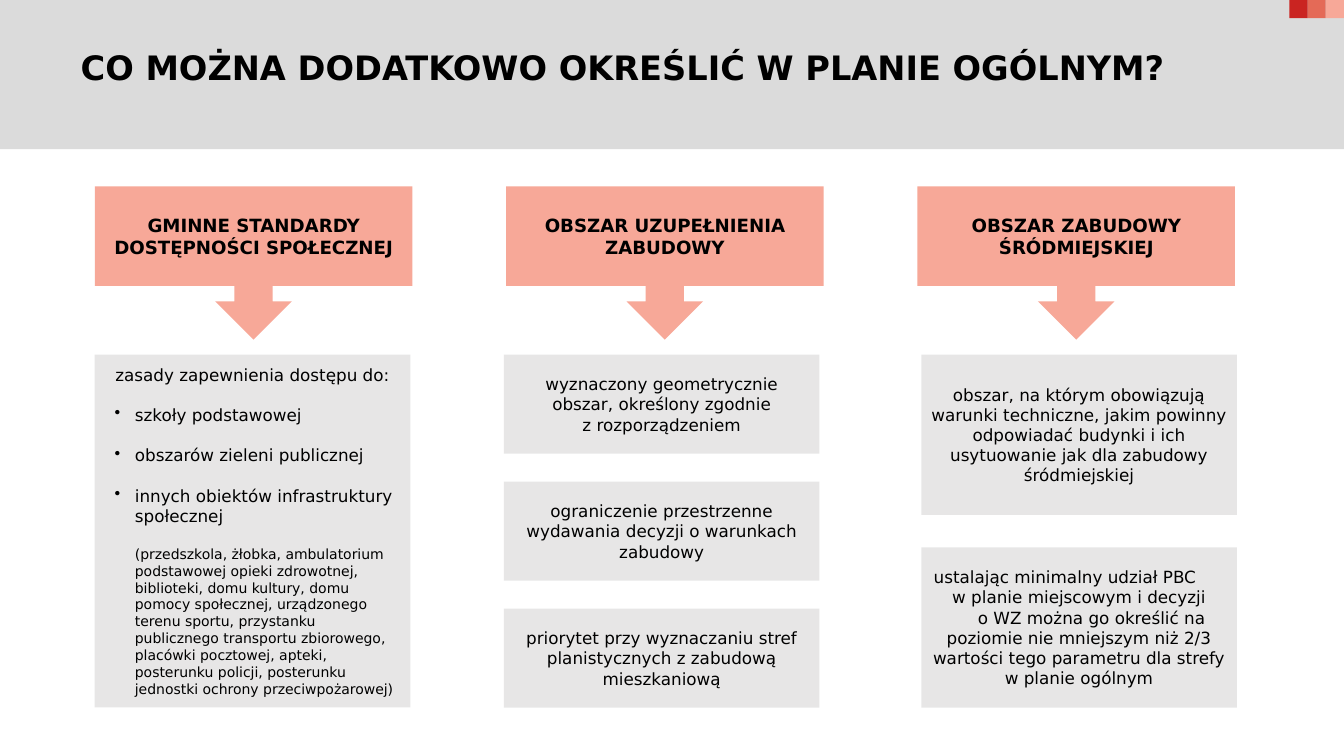
from dataclasses import dataclass

from lxml import etree
from pptx import Presentation
from pptx.dml.color import RGBColor
from pptx.enum.shapes import MSO_SHAPE as Kind
from pptx.enum.text import MSO_ANCHOR as Anchor, MSO_AUTO_SIZE as Fit, PP_ALIGN as Align
from pptx.oxml.ns import qn
from pptx.util import Pt

BLACK = RGBColor(0x00, 0x00, 0x00)
BAND = RGBColor(0xDB, 0xDB, 0xDB)
GREY = RGBColor(0xD0, 0xCE, 0xCE)
RED = RGBColor(0xCA, 0x24, 0x21)
CORAL = RGBColor(0xE4, 0x6A, 0x57)
PINK = RGBColor(0xF7, 0xA8, 0x98)
FONT = "DejaVu Sans"


@dataclass
class Par:
    text: str
    size: float = 12
    align: Align = Align.CENTER
    left: float = 0
    right: float = 0
    hang: float = 0
    gap: float = 0
    bold: bool = False


def item(text):
    return Par(text, align=Align.LEFT, left=21.6, hang=14.4, gap=14.4)


ACCESS = [
    Par("zasady zapewnienia dostępu do:"),
    item("szkoły podstawowej"),
    item("obszarów zieleni publicznej"),
    item("innych obiektów infrastruktury społecznej"),
    Par("(przedszkola, żłobka, ambulatorium podstawowej opieki zdrowotnej, "
        "biblioteki, domu kultury, domu pomocy społecznej, urządzonego terenu "
        "sportu, przystanku publicznego transportu zbiorowego, placówki "
        "pocztowej, apteki, posterunku policji, posterunku jednostki ochrony "
        "przeciwpożarowej)", size=10, align=Align.LEFT, left=21.6, gap=14),
]
INFILL = [
    [Par("wyznaczony geometrycznie obszar, określony zgodnie\nz rozporządzeniem")],
    [Par("ograniczenie przestrzenne"), Par("wydawania decyzji o warunkach"),
     Par("zabudowy")],
    [Par("priorytet przy wyznaczaniu stref"), Par("planistycznych z zabudową"),
     Par("mieszkaniową")],
]
CENTRE = [
    [Par("obszar, na którym obowiązują"),
     Par("warunki techniczne, jakim powinny odpowiadać budynki i ich "
         "usytuowanie jak dla zabudowy śródmiejskiej")],
    [Par("ustalając minimalny udział PBC", right=20),
     Par("w planie miejscowym i decyzji"),
     Par("o WZ można go określić na", left=18),
     Par("poziomie nie mniejszym niż 2/3 wartości tego parametru dla strefy "
         "w planie ogólnym")],
]

# Heading, left of the grey boxes, box height, box texts
COLS = [
    ("GMINNE STANDARDY DOSTĘPNOŚCI SPOŁECZNEJ", 67.7, 252, [ACCESS]),
    ("OBSZAR UZUPEŁNIENIA ZABUDOWY", 360, 70.6, INFILL),
    ("OBSZAR ZABUDOWY ŚRÓDMIEJSKIEJ", 658.1, 114.5, CENTRE),
]


def write(frame, pars, anchor=Anchor.MIDDLE):
    frame.word_wrap = True
    frame.auto_size = Fit.NONE
    frame.vertical_anchor = anchor
    for n, par in enumerate(pars):
        para = frame.add_paragraph() if n else frame.paragraphs[0]
        para.alignment = par.align
        if par.gap:
            para.space_before = Pt(par.gap)
        props = para._p.get_or_add_pPr()
        props.set("marL", str(Pt(par.left)))
        props.set("marR", str(Pt(par.right)))
        props.set("indent", str(-Pt(par.hang)))
        if par.hang:
            etree.SubElement(props, qn("a:buChar")).set("char", "•")
        for m, line in enumerate(par.text.split("\n")):
            if m:
                para.add_line_break()
            run = para.add_run()
            run.text = line
            font = run.font
            font.name, font.size, font.bold = FONT, Pt(par.size), par.bold
            font.color.rgb = BLACK


def block(slide, kind, left, top, width, height, fill, alpha=100):
    shape = slide.shapes.add_shape(kind, Pt(left), Pt(top), Pt(width), Pt(height))
    shape.shadow.inherit = False
    shape.fill.solid()
    shape.fill.fore_color.rgb = fill
    shape.line.fill.background()
    if alpha < 100:
        tint = shape._element.spPr.find(".//" + qn("a:srgbClr"))
        etree.SubElement(tint, qn("a:alpha")).set("val", str(alpha * 1000))
    return shape


def header(slide, width, height):
    # Band and corner squares
    block(slide, Kind.RECTANGLE, 0, 0, width, height, BAND)
    side = 13
    for n, fill in enumerate((PINK, CORAL, RED), 1):
        block(slide, Kind.RECTANGLE, width - n * side, 0, side, side, fill)
    # Title, brought in front of the band
    title = slide.shapes.title
    title.left, title.top = Pt(50.4), Pt(28.8)
    title.width, title.height = Pt(869.8), Pt(38)
    write(title.text_frame, [Par("CO MOŻNA DODATKOWO OKREŚLIĆ W PLANIE OGÓLNYM?",
                                 size=24, align=Align.LEFT, bold=True)])
    node = title._element
    node.getparent().append(node)


def column(slide, left, top, head, inner, tall, texts):
    # Heading with its arrow
    call = block(slide, Kind.DOWN_ARROW_CALLOUT, left, top, 226.8, 109.4, PINK)
    write(call.text_frame, [Par(head, size=13, bold=True)])
    # Grey boxes, spread over a fixed depth
    depth = 252
    step = (depth - tall) / max(len(texts) - 1, 1)
    for n, pars in enumerate(texts):
        box = block(slide, Kind.RECTANGLE, inner, top + 120.2 + n * step,
                    225.4, tall, GREY, 50)
        full = tall == depth
        write(box.text_frame, pars, Anchor.TOP if full else Anchor.MIDDLE)
        if full:
            box.text_frame.margin_top = Pt(7)


def main():
    deck = Presentation()
    deck.slide_width, deck.slide_height = Pt(960), Pt(540)
    slide = deck.slides.add_slide(deck.slide_layouts[5])
    header(slide, 960, 106.6)
    for n, (head, inner, tall, texts) in enumerate(COLS):
        column(slide, 67.7 + n * 293.8, 133.2, head, inner, tall, texts)
    deck.save("out.pptx")


if __name__ == "__main__":
    main()
